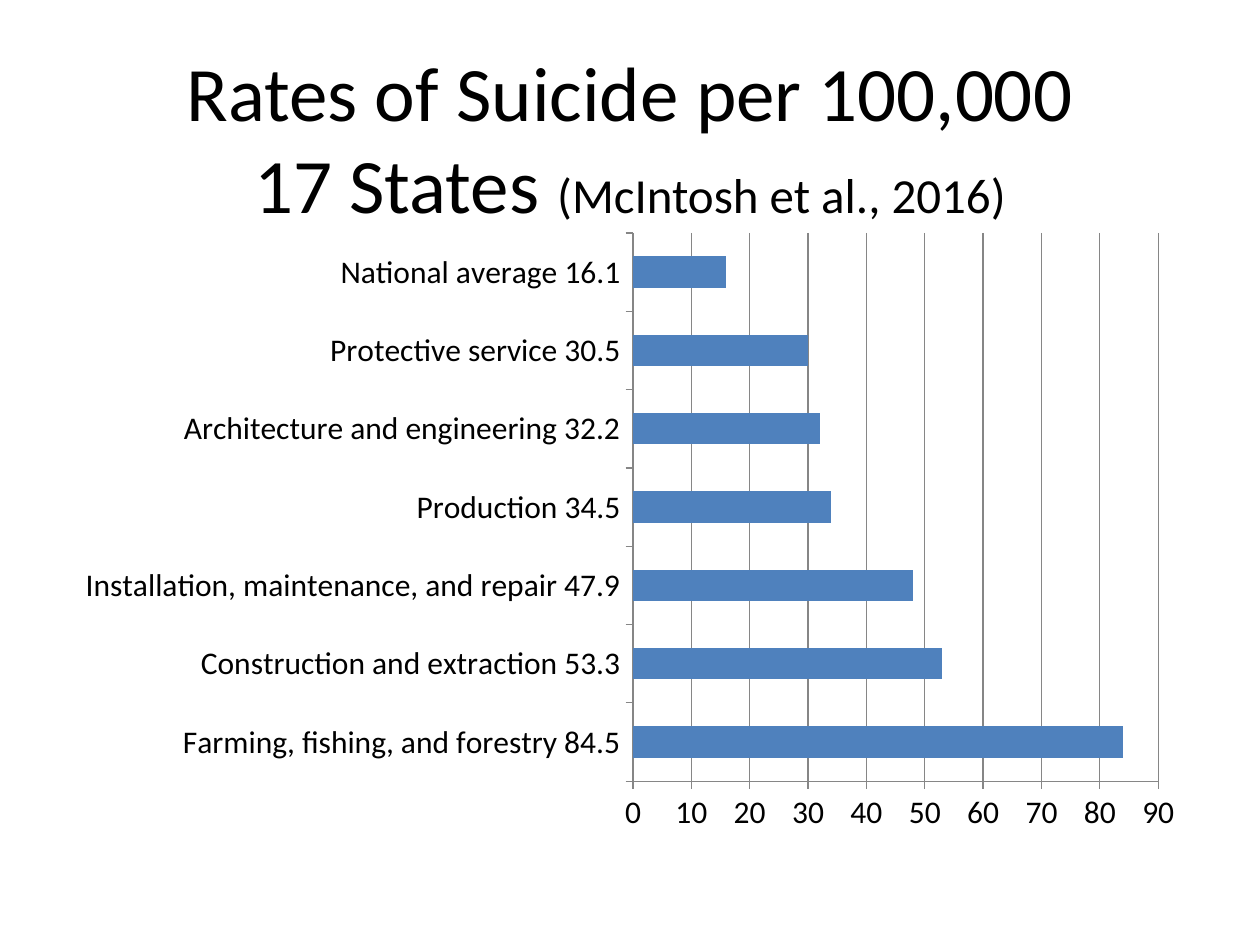
from dataclasses import dataclass

from pptx import Presentation
from pptx.chart.data import CategoryChartData
from pptx.dml.color import RGBColor
from pptx.enum.chart import XL_CHART_TYPE as Kind, XL_TICK_MARK as Tick
from pptx.enum.text import MSO_ANCHOR as Anchor, PP_ALIGN as Align
from pptx.util import Inches, Pt


@dataclass(frozen=True)
class Theme:
    font: str = "Calibri"
    ink: RGBColor = RGBColor(0, 0, 0)
    bar: RGBColor = RGBColor(0x4F, 0x81, 0xBD)
    line: RGBColor = RGBColor(0x86, 0x86, 0x86)
    title: Pt = Pt(44)
    cite: Pt = Pt(28)
    label: Pt = Pt(18)


THEME = Theme()

RATES = [
    ("Farming, fishing, and forestry", 84.5),
    ("Construction and extraction", 53.3),
    ("Installation, maintenance, and repair", 47.9),
    ("Production", 34.5),
    ("Architecture and engineering", 32.2),
    ("Protective service", 30.5),
    ("National average", 16.1),
]


def style(font, size):
    font.name = THEME.font
    font.size = size
    font.color.rgb = THEME.ink


def add_run(para, text, size):
    run = para.add_run()
    run.text = text
    style(run.font, size)


def set_title(slide):
    box = slide.shapes.title
    box.left, box.top = Inches(0.5), Inches(0.3)
    box.width, box.height = Inches(9), Inches(1.25)
    frame = box.text_frame
    frame.word_wrap = True
    frame.vertical_anchor = Anchor.TOP
    para = frame.paragraphs[0]
    para.alignment = Align.CENTER
    add_run(para, "Rates of Suicide per 100,000", THEME.title)
    para.add_line_break()
    add_run(para, "17 States ", THEME.title)
    add_run(para, "(McIntosh et al., 2016)", THEME.cite)


def set_axis(axis):
    axis.major_tick_mark = Tick.OUTSIDE
    axis.minor_tick_mark = Tick.NONE
    axis.format.line.color.rgb = THEME.line
    style(axis.tick_labels.font, THEME.label)


def add_bars(slide):
    """Labels give the exact rates; bars are drawn in whole numbers."""
    data = CategoryChartData()
    data.categories = [f"{job} {rate}" for job, rate in RATES]
    data.add_series("Series 1", [round(rate) for _, rate in RATES])
    chart = slide.shapes.add_chart(
        Kind.BAR_CLUSTERED, Inches(0.5), Inches(1.75), Inches(9), Inches(4.95), data
    ).chart
    chart.has_legend = False
    chart.has_title = False
    style(chart.font, THEME.label)

    plot = chart.plots[0]
    plot.gap_width = 150
    plot.vary_by_categories = False
    fill = plot.series[0].format.fill
    fill.solid()
    fill.fore_color.rgb = THEME.bar

    set_axis(chart.category_axis)
    scale = chart.value_axis
    set_axis(scale)
    scale.minimum_scale, scale.maximum_scale = 0, 90
    scale.major_unit = 10
    scale.has_major_gridlines = True
    scale.major_gridlines.format.line.color.rgb = THEME.line


def main():
    deck = Presentation()
    deck.slide_width, deck.slide_height = Inches(10), Inches(7.5)
    slide = deck.slides.add_slide(deck.slide_layouts[5])
    set_title(slide)
    add_bars(slide)
    deck.save("out.pptx")


if __name__ == "__main__":
    main()
